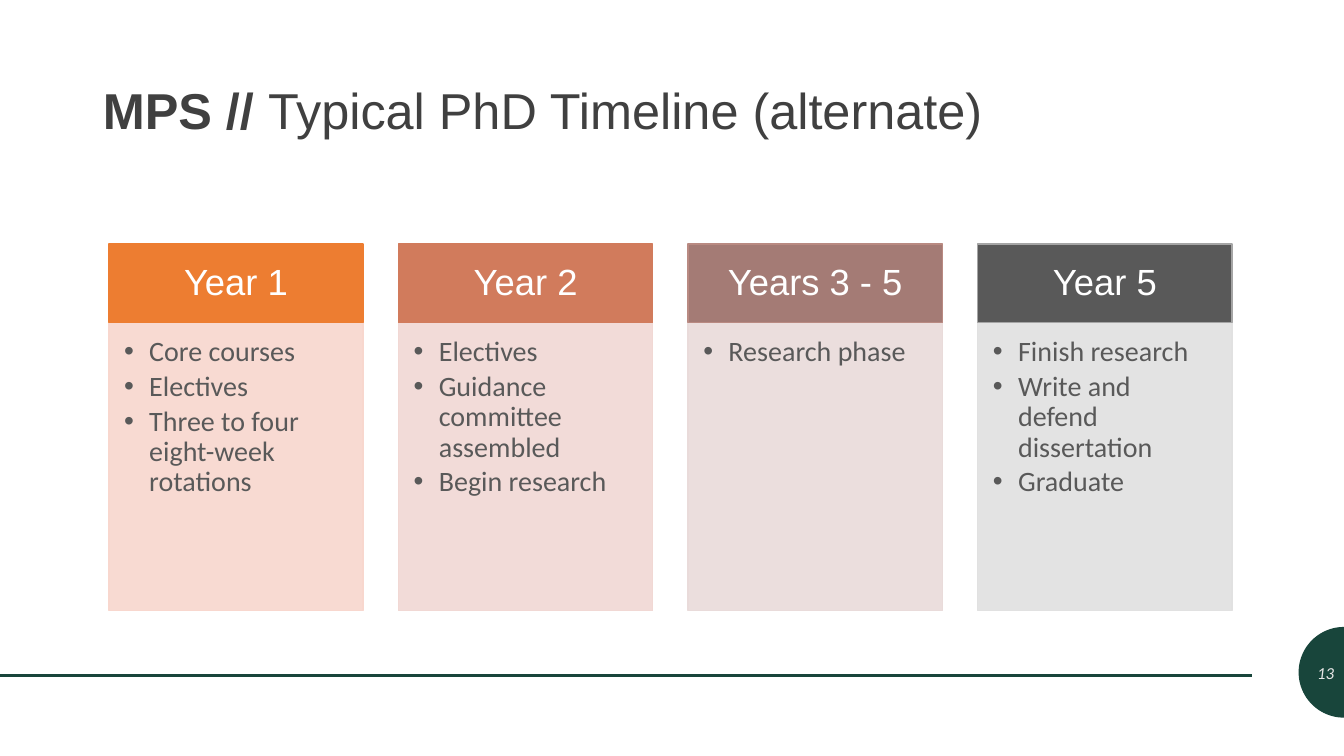
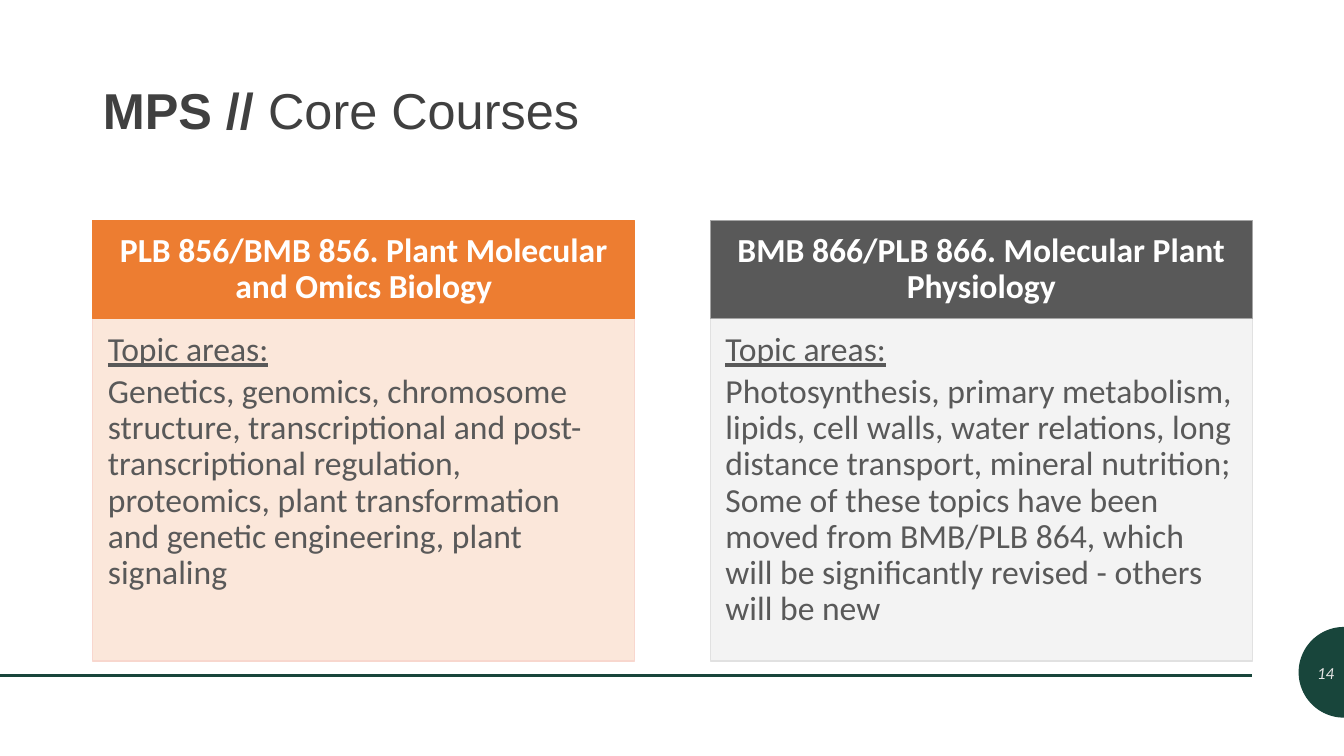
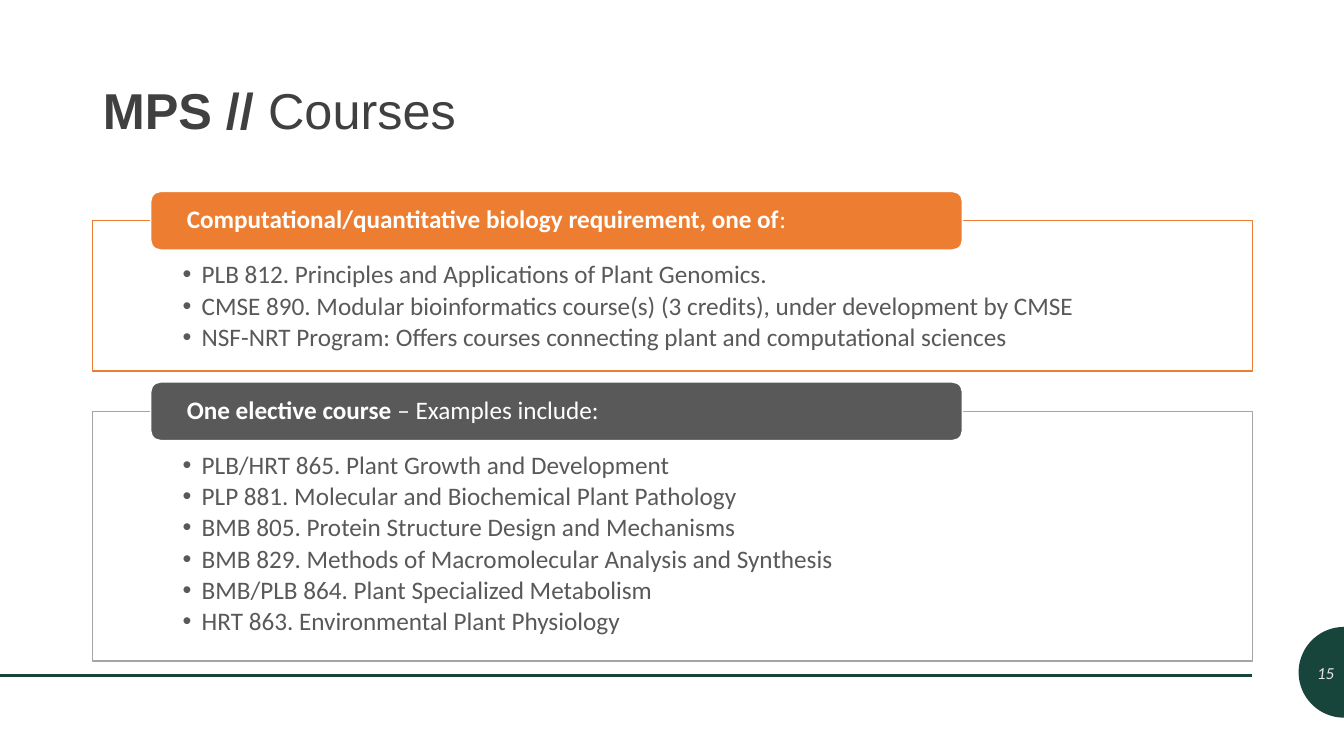
import math

from lxml import etree
from pptx import Presentation
from pptx import util as u
from pptx.dml.color import RGBColor
from pptx.enum import shapes, text
from pptx.oxml.ns import qn

WIDTH, HEIGHT = 13.33, 7.5
LEFT, RIGHT = 0.92, 12.42
PANEL_TOP = 2.19
RULE_Y = 6.7
LINE_SPACING = 0.9
SPACE_AFTER = 0.16  # share of the text size
HEADER_INSETS = (0.19, 0.11, 0.19, 0.11)

SANS, BODY = "Arial", "Calibri"
GREEN = RGBColor(0x18, 0x45, 0x3B)
TITLE_GREY = RGBColor(0x40, 0x40, 0x40)
DARK_GREY = RGBColor(0x59, 0x59, 0x59)
MID_GREY = RGBColor(0xA5, 0xA5, 0xA5)
LIGHT_GREY = RGBColor(0xE1, 0xE1, 0xE1)
PALE_GREY = RGBColor(0xF2, 0xF2, 0xF2)
NUMBER_GREY = RGBColor(0xE7, 0xE6, 0xE6)
WHITE = RGBColor(0xFF, 0xFF, 0xFF)
ORANGE = RGBColor(0xED, 0x7D, 0x31)
PALE_ORANGE = RGBColor(0xFB, 0xE5, 0xD6)
PEACH = RGBColor(0xF8, 0xD7, 0xCE)
TERRACOTTA = RGBColor(0xD1, 0x7B, 0x5C)
PALE_TERRACOTTA = RGBColor(0xF1, 0xD8, 0xD4)
MAUVE = RGBColor(0xA4, 0x7B, 0x75)
MAUVE_EDGE = RGBColor(0xB9, 0x8A, 0x82)
PALE_MAUVE = RGBColor(0xE9, 0xDB, 0xDA)

TWO_CONTENT, COMPARISON = 3, 4

# header, header fill, header edge, body fill, list
YEARS = [
    ("Year 1", ORANGE, ORANGE, PEACH,
     ["Core courses", "Electives", "Three to four eight-week rotations"]),
    ("Year 2", TERRACOTTA, TERRACOTTA, PALE_TERRACOTTA,
     ["Electives", "Guidance committee assembled", "Begin research"]),
    ("Years 3 - 5", MAUVE, MAUVE_EDGE, PALE_MAUVE, ["Research phase"]),
    ("Year 5", DARK_GREY, MID_GREY, LIGHT_GREY,
     ["Finish research", "Write and defend dissertation", "Graduate"]),
]

# header, header fill, header edge, body fill, body edge, topics
CORE_COURSES = [
    ("PLB 856/BMB 856. Plant Molecular and Omics Biology",
     ORANGE, ORANGE, PALE_ORANGE, PEACH,
     "Genetics, genomics, chromosome structure, transcriptional and "
     "post-transcriptional regulation, proteomics, plant transformation "
     "and genetic engineering, plant signaling"),
    ("BMB 866/PLB 866. Molecular Plant Physiology",
     DARK_GREY, MID_GREY, PALE_GREY, LIGHT_GREY,
     "Photosynthesis, primary metabolism, lipids, cell walls, water "
     "relations, long distance transport, mineral nutrition; Some of these "
     "topics have been moved from BMB/PLB 864, which will be significantly "
     "revised - others will be new"),
]

# bold lead, rest of the tab, tab fill, panel edge, courses
REQUIREMENTS = [
    ("Computational/quantitative biology requirement, one of", ":",
     ORANGE, ORANGE,
     ["PLB 812. Principles and Applications of Plant Genomics.",
      "CMSE 890. Modular bioinformatics course(s) (3 credits), "
      "under development by CMSE",
      "NSF-NRT Program: Offers courses connecting plant and "
      "computational sciences"]),
    ("One elective course ", "– Examples include:", DARK_GREY, MID_GREY,
     ["PLB/HRT 865. Plant Growth and Development",
      "PLP 881. Molecular and Biochemical Plant Pathology",
      "BMB 805. Protein Structure Design and Mechanisms",
      "BMB 829. Methods of Macromolecular Analysis and Synthesis",
      "BMB/PLB 864. Plant Specialized Metabolism",
      "HRT 863. Environmental Plant Physiology"]),
]


def columns(left, right, count, gap):
    """Return the left edges and the shared width of equal columns."""
    width = (right - left - gap * (count - 1)) / count
    return [left + i * (width + gap) for i in range(count)], width


def inches(lengths):
    return [u.Inches(length) for length in lengths]


def place(shape, box):
    shape.left, shape.top, shape.width, shape.height = inches(box)


def paint(shape, fill, edge, opacity=None):
    shape.shadow.inherit = False
    shape.fill.solid()
    shape.fill.fore_color.rgb = fill
    shape.line.color.rgb = edge
    shape.line.width = u.Pt(1)
    if opacity is not None:
        colour = shape._element.spPr.find(qn("a:solidFill"))[0]
        etree.SubElement(colour, qn("a:alpha"), val=str(opacity * 1000))


def set_frame(frame, anchor, insets=(0.1, 0.05, 0.1, 0.05)):
    frame.word_wrap = True
    frame.auto_size = text.MSO_AUTO_SIZE.NONE
    frame.vertical_anchor = anchor
    (frame.margin_left, frame.margin_top,
     frame.margin_right, frame.margin_bottom) = inches(insets)


def style_runs(paragraph, font, size, colour, bold=False):
    for run in paragraph.runs:
        run.font.name, run.font.size = font, u.Pt(size)
        run.font.bold = bold
        run.font.color.rgb = colour


def write_lead(paragraph, lead, rest, font, size, colour):
    """Write a bold lead followed by plain text."""
    paragraph.text = lead
    paragraph.add_run().text = rest
    paragraph.alignment = text.PP_ALIGN.LEFT
    paragraph.line_spacing = LINE_SPACING
    style_runs(paragraph, font, size, colour)
    paragraph.runs[0].font.bold = True


def set_bullet(paragraph, indent):
    """Hang a bullet by the indent, or remove the bullet if it is zero."""
    properties = paragraph._p.get_or_add_pPr()
    properties.set("marL", str(u.Inches(indent)))
    properties.set("indent", str(-u.Inches(indent)))
    if indent:
        etree.SubElement(properties, qn("a:buFont"), typeface=SANS)
        etree.SubElement(properties, qn("a:buChar"), char="•")
    else:
        etree.SubElement(properties, qn("a:buNone"))


def fill_body(body, box, fill, edge, insets, lines, size, indent=0):
    """Turn a body placeholder into a tinted panel of text."""
    place(body, box)
    paint(body, fill, edge, opacity=90)
    frame = body.text_frame
    set_frame(frame, text.MSO_ANCHOR.TOP, insets)
    frame.text = "\n".join(lines)
    for paragraph in frame.paragraphs:
        set_bullet(paragraph, indent)
        paragraph.alignment = text.PP_ALIGN.LEFT
        paragraph.line_spacing = LINE_SPACING
        paragraph.space_before = u.Pt(0)
        paragraph.space_after = u.Pt(size * SPACE_AFTER)
        style_runs(paragraph, BODY, size, DARK_GREY)


def add_header(slide, box, label, fill, edge, font, size, bold=False):
    header = slide.shapes.add_shape(shapes.MSO_SHAPE.RECTANGLE, *inches(box))
    paint(header, fill, edge)
    set_frame(header.text_frame, text.MSO_ANCHOR.MIDDLE, HEADER_INSETS)
    header.text_frame.text = label
    paragraph = header.text_frame.paragraphs[0]
    paragraph.alignment = text.PP_ALIGN.CENTER
    paragraph.line_spacing = LINE_SPACING
    style_runs(paragraph, font, size, WHITE, bold)


def add_tab(slide, box, lead, rest, fill):
    tab = slide.shapes.add_shape(
        shapes.MSO_SHAPE.ROUNDED_RECTANGLE, *inches(box))
    paint(tab, fill, WHITE)
    set_frame(tab.text_frame, text.MSO_ANCHOR.MIDDLE, (0.33, 0, 0.33, 0))
    write_lead(tab.text_frame.paragraphs[0], lead, rest, BODY, 18, WHITE)


def add_footer(slide, number):
    rule = slide.shapes.add_connector(
        shapes.MSO_CONNECTOR.STRAIGHT,
        *inches((0, RULE_Y, RIGHT, RULE_Y)))
    rule.line.color.rgb = GREEN
    rule.line.width = u.Pt(2)
    etree.SubElement(rule._element.spPr, qn("a:effectLst"))

    radius, centre_y, steps = 0.45, 6.67, 48
    angles = [math.pi * (0.5 + i / steps) for i in range(steps + 1)]
    arc = [(u.Inches(WIDTH + radius * math.cos(a)),
            u.Inches(centre_y + radius * math.sin(a))) for a in angles]
    outline = slide.shapes.build_freeform(*arc[0])
    outline.add_line_segments(arc[1:], close=True)
    badge = outline.convert_to_shape()
    paint(badge, GREEN, GREEN)
    badge.line.fill.background()

    page = slide.shapes.add_textbox(
        *inches((WIDTH - radius, centre_y - 0.2, radius, 0.4)))
    set_frame(page.text_frame, text.MSO_ANCHOR.MIDDLE)
    page.text_frame.text = str(number)
    paragraph = page.text_frame.paragraphs[0]
    paragraph.alignment = text.PP_ALIGN.RIGHT
    style_runs(paragraph, BODY, 12, NUMBER_GREY)
    paragraph.runs[0].font.italic = True


def start_slide(deck, layout, title, number):
    """Add a slide with title and footer; return it and its bodies."""
    slide = deck.slides.add_slide(deck.slide_layouts[layout])
    heading = slide.shapes.title
    place(heading, (LEFT, 0.4, RIGHT - LEFT, 1.45))
    set_frame(heading.text_frame, text.MSO_ANCHOR.MIDDLE)
    write_lead(heading.text_frame.paragraphs[0], "MPS // ", title,
               SANS, 36, TITLE_GREY)
    bodies = list(slide.placeholders)[1:]
    add_footer(slide, number)
    return slide, bodies


def build_timeline(deck):
    slide, bodies = start_slide(
        deck, COMPARISON, "Typical PhD Timeline (alternate)", 13)
    lefts, width = columns(1.08, 12.22, len(YEARS), 0.35)
    top, header_height, body_height = 2.42, 0.78, 2.86
    for left, body, year in zip(lefts, bodies, YEARS):
        label, fill, edge, tint, steps = year
        fill_body(body, (left, top + header_height, width, body_height),
                  tint, tint, (0.15, 0.15, 0.19, 0.22), steps, 20, 0.25)
        add_header(slide, (left, top, width, header_height),
                   label, fill, edge, SANS, 26)


def build_core_courses(deck):
    slide, bodies = start_slide(deck, TWO_CONTENT, "Core Courses", 14)
    lefts, width = columns(LEFT, RIGHT, len(CORE_COURSES), 0.75)
    header_height, body_height = 0.97, 3.4
    for left, body, course in zip(lefts, bodies, CORE_COURSES):
        label, fill, edge, tint, tint_edge, topics = course
        fill_body(body,
                  (left, PANEL_TOP + header_height, width, body_height),
                  tint, tint_edge, (0.15, 0.14, 0.19, 0.21),
                  ["Topic areas:", topics], 24)
        body.text_frame.paragraphs[0].runs[0].font.underline = True
        add_header(slide, (left, PANEL_TOP, width, header_height),
                   label, fill, edge, BODY, 24, bold=True)


def build_courses(deck):
    slide, bodies = start_slide(deck, TWO_CONTENT, "Courses", 15)
    width, tab_height, gap = RIGHT - LEFT, 0.58, 0.4
    top = PANEL_TOP
    for body, requirement in zip(bodies, REQUIREMENTS):
        lead, rest, fill, edge, courses = requirement
        height = 0.5 + 0.33 * len(courses)
        fill_body(body, (LEFT, top, width, height), WHITE, edge,
                  (0.89, 0.41, 0.89, 0.14), courses, 18, 0.19)
        add_tab(slide, (LEFT + width * 0.05, top - tab_height / 2,
                        width * 0.7, tab_height), lead, rest, fill)
        top += height + gap


def main():
    deck = Presentation()
    deck.slide_width, deck.slide_height = inches((WIDTH, HEIGHT))
    build_timeline(deck)
    build_core_courses(deck)
    build_courses(deck)
    deck.save("out.pptx")


if __name__ == "__main__":
    main()
